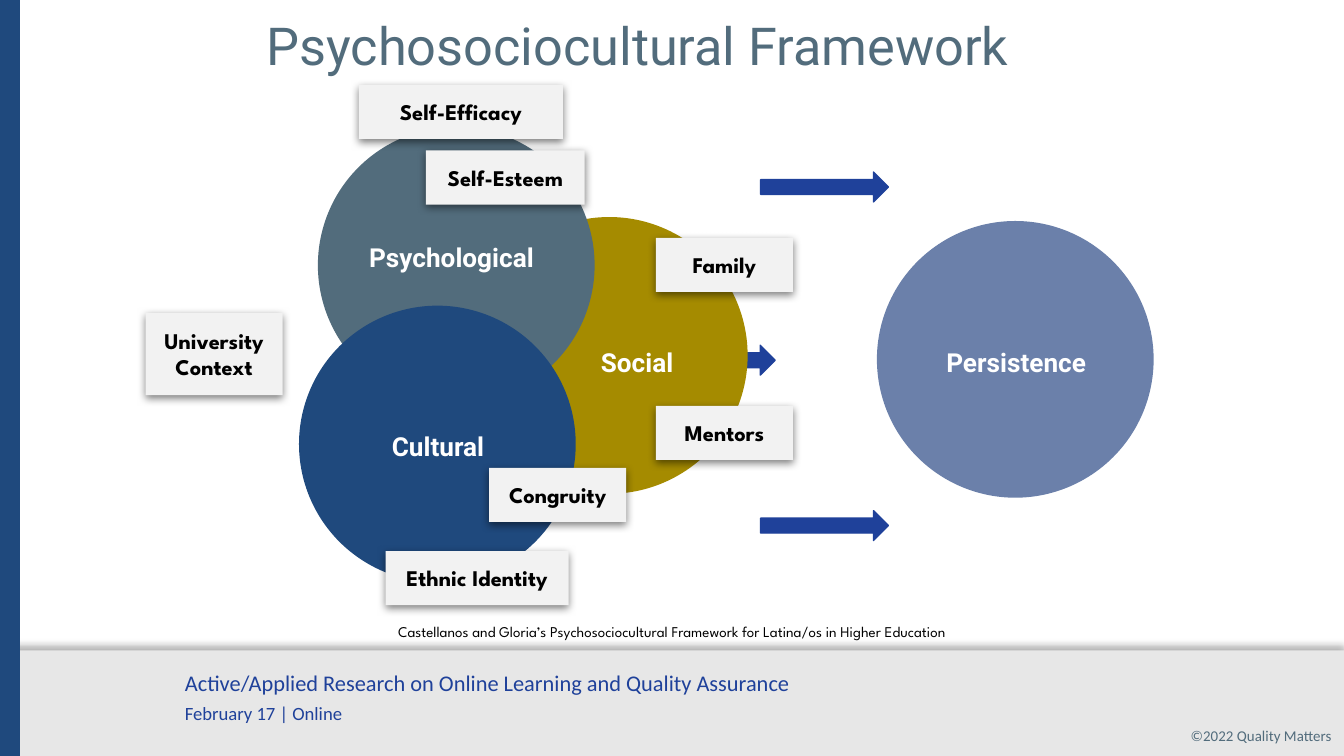
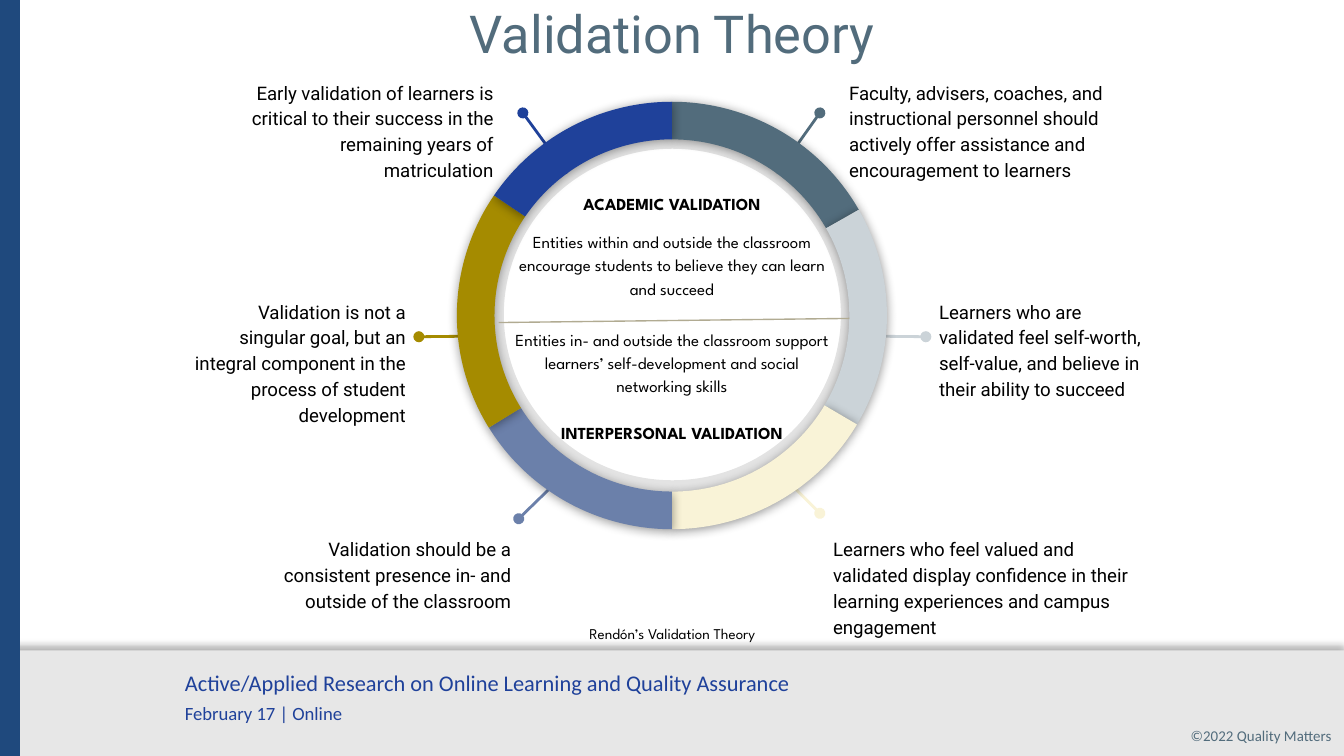
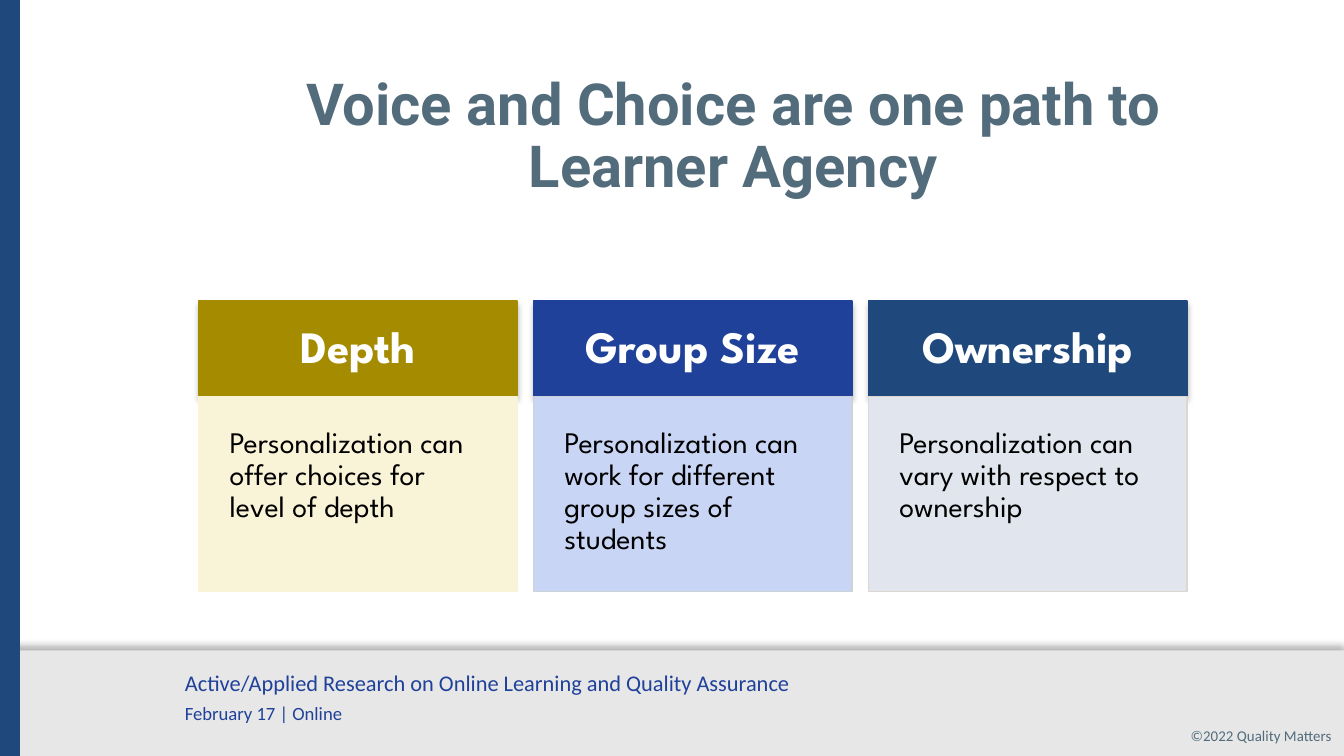
from itertools import pairwise
from typing import NamedTuple

from lxml.etree import SubElement
from pptx import Presentation
from pptx.dml.color import RGBColor
from pptx.enum.shapes import MSO_CONNECTOR, MSO_SHAPE
from pptx.enum.text import MSO_ANCHOR, MSO_AUTO_SIZE, PP_ALIGN
from pptx.oxml.ns import qn
from pptx.util import Pt

COLORS = {
    "white": "FFFFFF", "black": "000000", "band": "E7E7E7", "tag": "F2F2F2",
    "navy": "1F497D", "blue": "1F419A", "slate": "526C7C", "gold": "A58B00",
    "periwinkle": "6B80AA", "mist": "CBD3D8", "cream": "F9F3D7",
    "sky": "C9D5F4", "ice": "E1E6EE", "sand": "DDD7CF", "divider": "B1AB92",
}
BODY_FONT, ACCENT_FONT, FOOTER_FONT = "Roboto", "League Spartan", "Calibri"
LEFT, CENTER, RIGHT = PP_ALIGN.LEFT, PP_ALIGN.CENTER, PP_ALIGN.RIGHT


class Box(NamedTuple):
    left: float
    top: float
    width: float
    height: float

    def inside(self, left, top, width, height):
        return Box(self.left + left, self.top + top, width, height)

    def point(self, left, top):
        return self.left + left, self.top + top


class Shadow(NamedTuple):
    opacity: int
    blur: float
    distance: float
    direction: int


BAND_SHADOW = Shadow(29, 4, 3, 270)
TAG_SHADOW = Shadow(50, 4.5, 1.5, 90)
ARC_SHADOW = Shadow(40, 5.6, 0.8, 90)
CARD_SHADOW = Shadow(25, 3, 2, 90)


def style(font, size, color="black", bold=False, align=LEFT, spacing=1.0,
          anchor=MSO_ANCHOR.TOP, side=7.2, edge=7.2):
    return {
        "frame": {"word_wrap": True, "auto_size": MSO_AUTO_SIZE.NONE,
                  "vertical_anchor": anchor,
                  "margin_left": Pt(side), "margin_right": Pt(side),
                  "margin_top": Pt(edge), "margin_bottom": Pt(edge)},
        "paragraph": {"alignment": align, "line_spacing": spacing},
        "font": {"name": font, "size": Pt(size), "bold": bold},
        "color": color,
    }


STYLES = {
    "title": style(BODY_FONT, 28, "slate", align=CENTER, spacing=0.9, edge=3.6),
    "headline": style(BODY_FONT, 31, "slate", True, CENTER, 0.9, edge=3.6),
    "event": style(FOOTER_FONT, 12, "blue", edge=3.6),
    "copyright": style(FOOTER_FONT, 8, "slate", align=RIGHT, edge=3.6),
    "circle": style(BODY_FONT, 14, "white", True, CENTER, 1.15, MSO_ANCHOR.MIDDLE),
    "tag": style(ACCENT_FONT, 12, bold=True, align=CENTER),
    "citation": style(ACCENT_FONT, 8, align=CENTER, spacing=1.15),
    "note": style(BODY_FONT, 10, spacing=1.15),
    "validation": style(ACCENT_FONT, 9, align=CENTER, spacing=1.15),
    "card_head": style(ACCENT_FONT, 24, "white", True, CENTER, 0.9,
                       MSO_ANCHOR.MIDDLE, 13.7, 13.7),
    "card_body": style(ACCENT_FONT, 16, spacing=0.9, side=16.6, edge=16.6),
}


def rgb(color):
    return RGBColor.from_string(COLORS[color])


def apply(target, values):
    for name, value in values.items():
        setattr(target, name, value)


def write(shape, texts, style_name, **paragraph_values):
    look = STYLES[style_name]
    frame = shape.text_frame
    apply(frame, look["frame"])
    frame.text = "\n".join(texts)
    for paragraph in frame.paragraphs:
        apply(paragraph, look["paragraph"] | paragraph_values)
        apply(paragraph.font, look["font"])
        paragraph.font.color.rgb = rgb(look["color"])
    return frame.paragraphs


def add_text(slide, box, texts, style_name, **paragraph_values):
    caption = slide.shapes.add_textbox(*map(Pt, box))
    write(caption, texts, style_name, **paragraph_values)
    return caption


def add_figure(slide, kind, box, fill, line=None, line_width=0.75, shadow=None):
    figure = slide.shapes.add_shape(kind, *map(Pt, box))
    figure.fill.solid()
    figure.fill.fore_color.rgb = rgb(fill)
    if line:
        figure.line.color.rgb = rgb(line)
        figure.line.width = Pt(line_width)
    else:
        figure.line.fill.background()
    figure.shadow.inherit = False
    if shadow:
        effects = figure.element.spPr.find(qn("a:effectLst"))
        outer = SubElement(effects, qn("a:outerShdw"), blurRad=str(Pt(shadow.blur)),
                           dist=str(Pt(shadow.distance)),
                           dir=str(shadow.direction * 60000),
                           algn="ctr", rotWithShape="0")
        tint = SubElement(outer, qn("a:srgbClr"), val=COLORS["black"])
        SubElement(tint, qn("a:alpha"), val=str(shadow.opacity * 1000))
    return figure


def add_line(slide, start, end, color, width, dot=False):
    line = slide.shapes.add_connector(MSO_CONNECTOR.STRAIGHT, *map(Pt, start + end))
    line.line.color.rgb = rgb(color)
    line.line.width = Pt(width)
    properties = line.element.spPr
    if dot:
        SubElement(properties.find(qn("a:ln")), qn("a:headEnd"), type="oval")
    SubElement(properties, qn("a:effectLst"))
    return line


def build_frame(slide, box):
    band = box.inside(0, 348.5, box.width, 56.5)
    add_figure(slide, MSO_SHAPE.RECTANGLE, band, "band", shadow=BAND_SHADOW)
    add_figure(slide, MSO_SHAPE.RECTANGLE, box.inside(0, 0, 10.7, box.height), "navy")
    event = add_text(slide, band.inside(92, 6.5, 460, 37), [
        "Active/Applied Research on Online Learning and Quality Assurance",
        "February 17 | Online"], "event")
    date = event.text_frame.paragraphs[1]
    date.space_before = Pt(3)
    date.font.size = Pt(10)
    rights = add_text(slide, band.inside(599, 37.4, 114.5, 17.3),
                      ["©2022 Quality Matters"], "copyright")
    rights.text_frame.margin_right = 0


def move_to_layout(slide, layout):
    for placeholder in list(layout.placeholders)[1:]:
        layout.shapes.element.remove(placeholder.element)
    for part in list(slide.shapes)[1:]:
        layout.shapes.element.append(part.element)


def set_title(slide, box, text, style_name="title"):
    title = slide.shapes.title
    apply(title, dict(zip(box._fields, map(Pt, box))))
    write(title, [text], style_name)


def add_citation(slide, box, text):
    add_text(slide, box, [text], "citation")


def build_framework(slide, box):
    diameter = 146
    add_figure(slide, MSO_SHAPE.RIGHT_ARROW, box.inside(317.3, 140, 20, 16), "blue", "blue")
    circles = [
        ("Social", "gold", (175.4, 72.4), (220.8, 127.1, 85)),
        ("Psychological", "slate", (93.4, 24.1), (109.2, 70.9, 109.4)),
        ("Cultural", "navy", (83.3, 119.9), (114.2, 172.4, 85)),
        ("Persistence", "periwinkle", (392.9, 74.5), (417.4, 127.1, 98)),
    ]
    for name, color, corner, caption in circles:
        add_figure(slide, MSO_SHAPE.OVAL, box.inside(*corner, diameter, diameter),
                   color, color, 2.25)
        add_text(slide, box.inside(*caption, 41), [name], "circle")

    tags = [
        ("Family", 273.4, 82.4, 73.4, 29),
        ("Mentors", 273.4, 172.4, 73.4, 29),
        ("Congruity", 184.1, 205.6, 73.4, 29),
        ("Ethnic Identity", 128.6, 250.2, 98, 29),
        ("Self-Esteem", 150.2, 35.6, 85, 29),
        ("Self-Efficacy", 114.2, 0.4, 109.4, 29),
        ("University Context", 0, 122.8, 73.4, 44),
    ]
    for name, *place in tags:
        tag = add_figure(slide, MSO_SHAPE.RECTANGLE, box.inside(*place), "tag",
                         shadow=TAG_SHADOW)
        write(tag, [name], "tag")
    for top in (47.2, 228.6):
        add_figure(slide, MSO_SHAPE.RIGHT_ARROW, box.inside(329.5, top, 68.4, 16),
                   "blue", "blue")


def build_notes(slide, box):
    notes = [
        ("Faculty, advisers, coaches, and instructional personnel should actively "
         "offer assistance and encouragement to learners",
         "slate", LEFT, (352.8, 0.6, 168.5), (344.2, 26.5), (321.2, 58.9), None),
        ("Early validation of learners is critical to their success in the "
         "remaining years of matriculation",
         "blue", RIGHT, (23.8, 0.6, 152.6), (185.1, 26.5), (208.8, 58.9), None),
        ("Learners who are validated feel self-worth, self-value, and believe in "
         "their ability to succeed",
         "mist", LEFT, (401, 117.9, 129), (401, 146.4), (363.6, 146), 1),
        ("Validation is not a singular goal, but an integral component in the "
         "process of student development",
         "gold", RIGHT, (0.4, 117.9, 129), (129.4, 146.4), (166.4, 146), 3),
        ("Validation should be a consistent presence in- and outside of the classroom",
         "periwinkle", RIGHT, (29.6, 245.4, 156.2), (182.9, 243.9), (208.8, 218.7), None),
        ("Learners who feel valued and validated display confidence in their "
         "learning experiences and campus engagement",
         "cream", LEFT, (344.2, 245.4, 176.4), (344.2, 241), (319, 215.8), None),
    ]
    for text, color, align, place, dot, tip, side in notes:
        note = add_text(slide, box.inside(*place, 57), [text], "note", alignment=align)
        pin = add_line(slide, box.point(*dot), box.point(*tip), color, 1.5, dot=True)
        if side is not None:
            pin.begin_connect(note, side)


def build_ring(slide, box):
    inner = add_figure(slide, MSO_SHAPE.DONUT, box.inside(6.4, 6.5, 218, 215), "black")
    inner.adjustments[0] = 0.087
    tint = inner.element.spPr.find(qn("a:solidFill"))[0]
    SubElement(tint, qn("a:alpha"), val="11000")

    sectors = [("slate", 270), ("mist", 330.5), ("cream", 30.5),
               ("periwinkle", 90), ("gold", 148.5), ("blue", 214)]
    degree = 0.6
    for (color, start), (_, end) in pairwise(sectors + sectors[:1]):
        arc = add_figure(slide, MSO_SHAPE.BLOCK_ARC, box, color, shadow=ARC_SHADOW)
        for index, value in enumerate((start * degree, end * degree, 0.088)):
            arc.adjustments[index] = value


def build_validations(slide, box):
    add_line(slide, box.point(0, 77.8), box.point(188, 75.6), "divider", 0.75)
    halves = [
        (0, ["ACADEMIC VALIDATION",
             "Entities within and outside the classroom encourage students to "
             "believe they can learn and succeed"], 0, 8),
        (72.8, ["Entities in- and outside the classroom support learners’ "
                "self-development and social networking skills",
                "INTERPERSONAL VALIDATION"], 1, 12.5),
    ]
    for top, texts, heading, gap in halves:
        half = add_text(slide, box.inside(1.8, top, 182, 57), texts, "validation")
        paragraphs = half.text_frame.paragraphs
        paragraphs[heading].font.bold = True
        paragraphs[1].space_before = Pt(gap)


def build_wheel(slide, box):
    build_notes(slide, box)
    build_ring(slide, box.inside(149.8, 20.5, 230.4, 229))
    build_validations(slide, box.inside(172.1, 61, 188, 130))


def build_cards(slide, box):
    cards = [
        ("Depth", "Personalization can offer choices for level of depth",
         "gold", "cream", "cream"),
        ("Group Size", "Personalization can work for different group sizes of students",
         "blue", "sky", "mist"),
        ("Ownership", "Personalization can vary with respect to ownership",
         "navy", "ice", "sand"),
    ]
    gap, head_height = 8.7, 51.1
    width = (box.width - gap * (len(cards) - 1)) / len(cards)
    for index, (name, text, head_color, body_color, outline) in enumerate(cards):
        left = index * (width + gap)
        head = add_figure(slide, MSO_SHAPE.RECTANGLE,
                          box.inside(left, 0, width, head_height),
                          head_color, head_color, shadow=CARD_SHADOW)
        write(head, [name], "card_head")
        body = add_figure(slide, MSO_SHAPE.RECTANGLE,
                          box.inside(left, head_height, width, box.height - head_height),
                          body_color, outline)
        write(body, [text], "card_body")


def main():
    presentation = Presentation()
    page = Box(0, 0, 720, 405)
    presentation.slide_width, presentation.slide_height = Pt(page.width), Pt(page.height)
    layout = presentation.slide_layouts[5]
    framework, validation, agency = [
        presentation.slides.add_slide(layout) for _ in range(3)]
    build_frame(framework, page)
    move_to_layout(framework, layout)

    set_title(framework, Box(101.5, 7.2, 480, 75.6), "Psychosociocultural Framework")
    build_framework(framework, Box(78, 45, 540, 280))
    add_citation(framework, Box(125.3, 324.7, 470, 24.5),
                 "Castellanos and Gloria’s Psychosociocultural Framework "
                 "for Latina/os in Higher Education")

    set_title(validation, Box(120, 0.7, 480, 75.6), "Validation Theory")
    build_wheel(validation, Box(95, 34, 530, 303))
    add_citation(validation, Box(125.3, 326.2, 470, 24.5), "Rendón’s Validation Theory")

    set_title(agency, Box(105.8, 36.7, 574, 75.6),
              "Voice and Choice are one path to Learner Agency", "headline")
    build_cards(agency, Box(106.4, 161.2, 529.5, 155.6))
    presentation.save("out.pptx")


if __name__ == "__main__":
    main()
